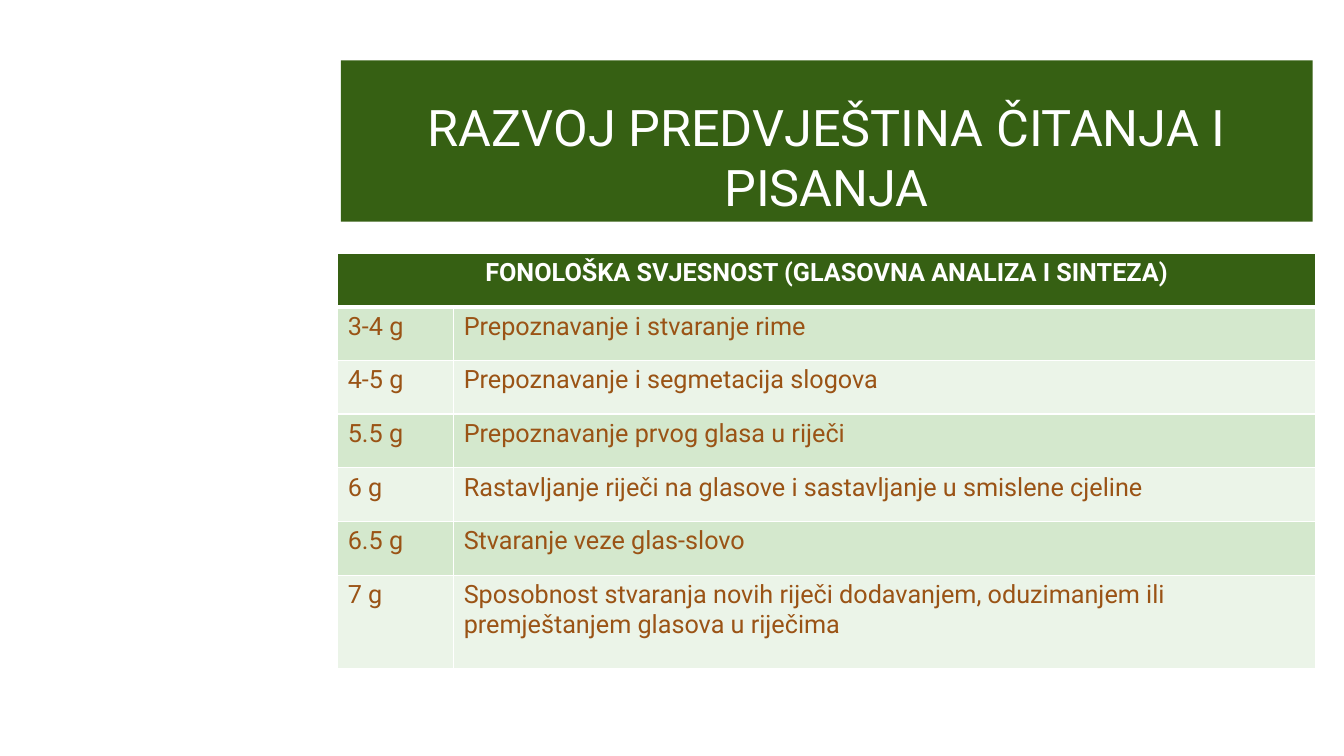
from lxml.etree import SubElement
from pptx import Presentation
from pptx.dml.color import RGBColor
from pptx.enum.text import MSO_ANCHOR, MSO_AUTO_SIZE, PP_ALIGN
from pptx.oxml import parse_xml
from pptx.oxml.ns import nsdecls, qn
from pptx.util import Inches, Pt

WHITE = RGBColor(0xFF, 0xFF, 0xFF)
DARK_GREEN = RGBColor(0x36, 0x60, 0x13)
MID_GREEN = RGBColor(0xD4, 0xE8, 0xCD)
PALE_GREEN = RGBColor(0xEB, 0xF4, 0xE8)
BROWN = RGBColor(0x9A, 0x53, 0x15)

TITLE = "RAZVOJ PREDVJEŠTINA ČITANJA I PISANJA"
TABLE_HEADING = "FONOLOŠKA SVJESNOST (GLASOVNA ANALIZA I SINTEZA)"
SKILLS_BY_AGE = [
    ("3-4 g", "Prepoznavanje i stvaranje rime"),
    ("4-5 g", "Prepoznavanje i segmetacija slogova"),
    ("5.5 g", "Prepoznavanje prvog glasa u riječi"),
    ("6 g", "Rastavljanje riječi na glasove i sastavljanje u smislene cjeline"),
    ("6.5 g", "Stvaranje veze glas-slovo"),
    ("7 g", "Sposobnost stvaranja novih riječi dodavanjem, oduzimanjem ili "
            "premještanjem glasova u riječima"),
]


class SlideBuilder:
    """Places styled elements on a grid of 75 rows with square cells."""

    font_name = "Roboto"
    grid_rows = 75

    def __init__(self, presentation):
        self.slide = presentation.slides.add_slide(presentation.slide_layouts[5])
        self.unit = presentation.slide_height / self.grid_rows

    def grid(self, *cells):
        return [round(count * self.unit) for count in cells]

    def style_text(self, text_frame, size, color, bold=False, align=PP_ALIGN.LEFT):
        for paragraph in text_frame.paragraphs:
            paragraph.alignment = align
            for run in paragraph.runs:
                run.font.name = self.font_name
                run.font.size = Pt(size)
                run.font.bold = bold
                run.font.color.rgb = color

    def title(self, text, left, top, width, height):
        shape = self.slide.shapes.title
        shape.left, shape.top, shape.width, shape.height = self.grid(left, top, width, height)
        shape.fill.solid()
        shape.fill.fore_color.rgb = DARK_GREEN
        text_frame = shape.text_frame
        text_frame.text = text
        text_frame.word_wrap = True
        text_frame.auto_size = MSO_AUTO_SIZE.NONE
        text_frame.vertical_anchor = MSO_ANCHOR.BOTTOM
        self.style_text(text_frame, 36, WHITE, align=PP_ALIGN.CENTER)

    def borders(self, cell, top, bottom):
        properties = cell._tc.get_or_add_tcPr()
        sides = {"lnL": 1, "lnR": 1, "lnT": top, "lnB": bottom}
        for position, (side, points) in enumerate(sides.items()):
            line = parse_xml(f'<a:{side} {nsdecls("a")} w="{Pt(points)}"/>')
            fill = SubElement(line, qn("a:solidFill"))
            SubElement(fill, qn("a:srgbClr"), val=str(WHITE))
            properties.insert(position, line)

    def table(self, heading, rows, left, top, column_widths, row_heights):
        frame = self.slide.shapes.add_table(
            len(rows) + 1, len(column_widths),
            *self.grid(left, top, sum(column_widths), sum(row_heights)))
        table = frame.table
        for column, width in zip(table.columns, self.grid(*column_widths)):
            column.width = width
        for row, height in zip(table.rows, self.grid(*row_heights)):
            row.height = height
        table.cell(0, 0).merge(table.cell(0, len(column_widths) - 1))

        for row_index, texts in enumerate([(heading, ""), *rows]):
            is_heading = row_index == 0
            band = MID_GREEN if row_index % 2 else PALE_GREEN
            for column_index, text in enumerate(texts):
                cell = table.cell(row_index, column_index)
                cell.text_frame.text = text
                cell.fill.solid()
                cell.fill.fore_color.rgb = DARK_GREEN if is_heading else band
                self.style_text(
                    cell.text_frame, 18, WHITE if is_heading else BROWN, is_heading,
                    PP_ALIGN.CENTER if is_heading else PP_ALIGN.LEFT)
                self.borders(cell, top=3 if row_index == 1 else 1,
                             bottom=3 if is_heading else 1)


def main():
    presentation = Presentation()
    presentation.slide_width = Inches(13.33)
    presentation.slide_height = Inches(7.5)
    builder = SlideBuilder(presentation)

    # Title band
    builder.title(TITLE, left=33.8, top=6, width=96.4, height=16)

    # Phonological awareness by age
    builder.table(TABLE_HEADING, SKILLS_BY_AGE, left=33.5, top=25.1,
                  column_widths=[11.5, 85.5],
                  row_heights=[5.33] * len(SKILLS_BY_AGE) + [9.3])

    presentation.save("out.pptx")


if __name__ == "__main__":
    main()
